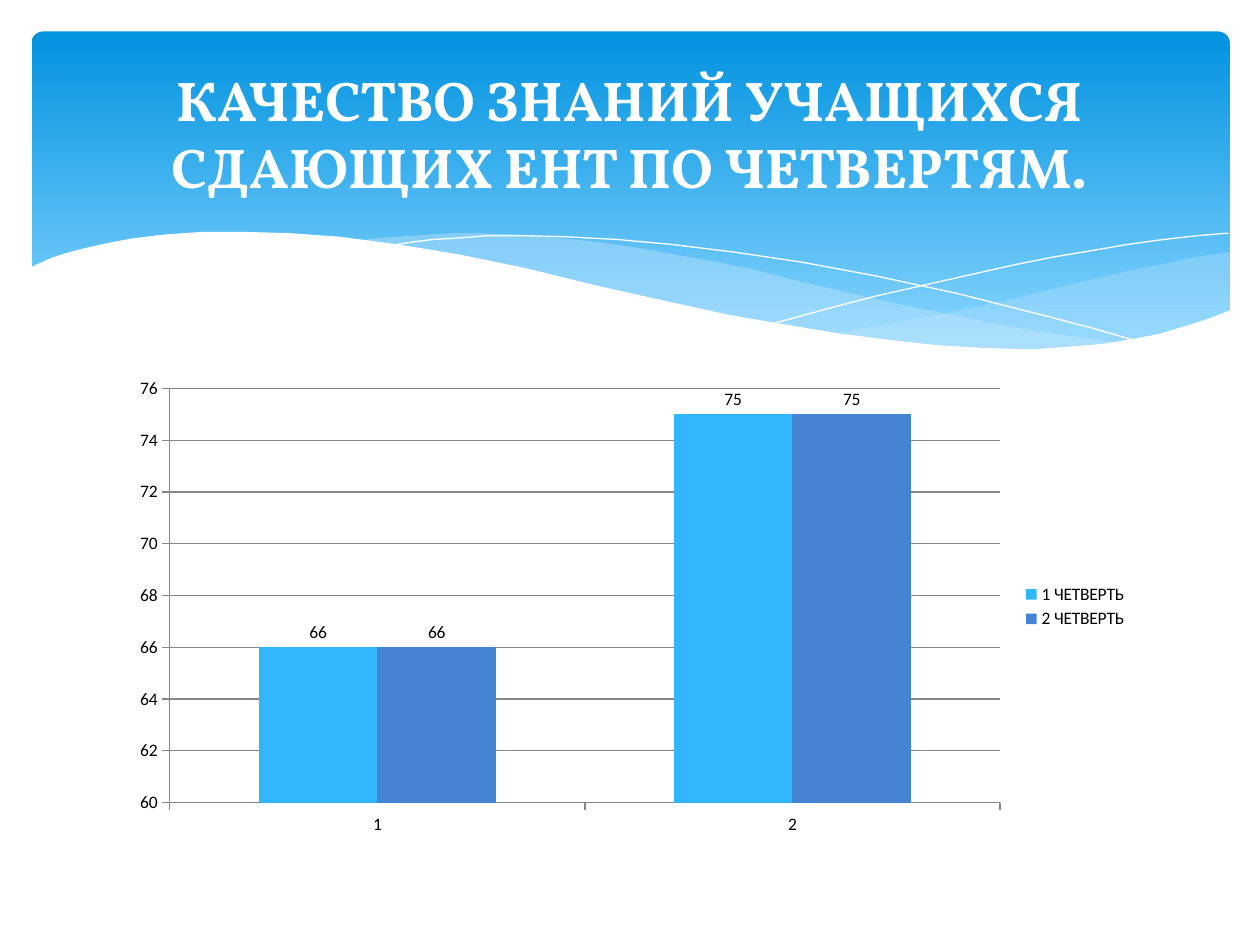
from lxml.etree import SubElement
from pptx import Presentation
from pptx.chart.data import CategoryChartData
from pptx.dml.color import RGBColor
from pptx.enum.chart import XL_CHART_TYPE as CHART, XL_LABEL_POSITION as LABEL
from pptx.enum.chart import XL_LEGEND_POSITION as LEGEND, XL_TICK_MARK as TICK
from pptx.enum.shapes import MSO_SHAPE
from pptx.enum.text import MSO_ANCHOR, PP_ALIGN
from pptx.oxml.ns import qn
from pptx.util import Inches, Pt

TITLE = "КАЧЕСТВО ЗНАНИЙ УЧАЩИХСЯ СДАЮЩИХ ЕНТ ПО ЧЕТВЕРТЯМ."
CATEGORIES = ["1", "2"]
SERIES = [("1 ЧЕТВЕРТЬ", (66, 75), "quarter1"), ("2 ЧЕТВЕРТЬ", (66, 75), "quarter2")]
COLORS = {
    "white": "FFFFFF", "black": "000000", "grid": "868686",
    "sky_top": "0293E0", "sky_bottom": "83D3FE", "mist": "C6E7FC",
    "quarter1": "31B6FD", "quarter2": "4584D3",
}

# Wave outlines, in hundredths of an inch
RIGHT_WAVE = [
    (976, 200), (948, 204), (921, 210), (891, 216), (861, 223), (805, 237), (753, 248),
    (706, 257), (661, 265), (691, 269), (719, 272), (745, 275), (769, 277), (803, 278),
    (835, 277), (863, 275), (889, 272), (913, 267), (935, 262), (949, 257), (963, 252),
    (976, 247),
]
MIDDLE_WAVE = [
    (893, 273), (866, 269), (837, 265), (807, 260), (775, 254), (741, 247), (706, 240),
    (668, 231), (629, 222), (598, 214), (569, 208), (541, 203), (514, 198), (489, 194),
    (465, 191), (442, 189), (420, 187), (399, 186), (380, 185), (361, 185), (344, 186),
    (328, 187), (313, 188), (299, 189), (286, 191), (323, 196), (362, 203), (404, 211),
    (449, 222), (491, 232), (530, 240), (566, 248), (601, 255), (634, 261), (665, 266),
    (695, 270), (722, 274), (748, 276), (773, 277), (796, 278), (828, 278), (857, 277),
    (876, 275),
]
FALLING_LINE = [
    (309, 195), (328, 192), (344, 190), (363, 189), (387, 187), (416, 187), (450, 188),
    (489, 190), (533, 194), (582, 200), (636, 208), (695, 219), (760, 233), (831, 251),
    (869, 261), (907, 272),
]
RISING_LINE = [
    (613, 257), (653, 246), (695, 235), (748, 223), (806, 210), (836, 204), (866, 199),
    (895, 194), (924, 190), (951, 187), (975, 185),
]
FRONT_WAVE = [
    (977, 246), (959, 253), (940, 259), (920, 265), (899, 269), (875, 273), (850, 275),
    (823, 277), (809, 277), (778, 276), (744, 274), (708, 270), (668, 265), (626, 258),
    (579, 250), (529, 239), (475, 227), (418, 213), (365, 202), (316, 194), (271, 188),
    (230, 185), (193, 184), (161, 184), (132, 186), (106, 189), (85, 193), (67, 197),
    (52, 201), (40, 205), (29, 210), (23, 213), (23, 329), (977, 329),
]
WAVES = [  # points, fill opacity in percent (None for an open line), colour
    (RIGHT_WAVE, 29, "mist"), (MIDDLE_WAVE, 40, "mist"),
    (FALLING_LINE, None, "white"), (RISING_LINE, None, "white"),
    (FRONT_WAVE, 100, "white"),
]


def rgb(name):
    return RGBColor.from_string(COLORS[name])


def add_banner(s):
    sp = s.shapes.add_shape(MSO_SHAPE.ROUNDED_RECTANGLE, Inches(0.25), Inches(0.25),
                            Inches(9.51), Inches(2.7))
    sp.adjustments[0] = 0.034
    sp.shadow.inherit = False
    sp.line.fill.background()
    sp.fill.gradient()
    sp.fill.gradient_angle = 270
    stops = zip(sp.fill.gradient_stops, [(0, "sky_top"), (0.9, "sky_bottom")])
    for stop, (position, color) in stops:
        stop.position = position
        stop.color.rgb = rgb(color)


def add_wave(s, points, opacity, color):
    closed = opacity is not None
    builder = s.shapes.build_freeform(*points[0], scale=Inches(0.01))
    builder.add_line_segments(points[1:], close=closed)
    sp = builder.convert_to_shape()
    sp.shadow.inherit = False
    if not closed:
        sp.fill.background()
        sp.line.color.rgb = rgb(color)
        sp.line.width = Pt(0)
        return
    sp.line.fill.background()
    sp.fill.solid()
    sp.fill.fore_color.rgb = rgb(color)
    if opacity < 100:
        clr = sp.fill._xPr.find(qn("a:solidFill"))[0]
        SubElement(clr, qn("a:alpha"), val=str(opacity * 1000))


def add_quality_chart(s):
    data = CategoryChartData()
    data.categories = CATEGORIES
    for name, values, _ in SERIES:
        data.add_series(name, values)
    chart = s.shapes.add_chart(CHART.COLUMN_CLUSTERED, Inches(0.95), Inches(2.93),
                               Inches(8.1), Inches(3.77), data).chart
    chart.has_title = False
    chart.font.size = Pt(10)
    chart.font.name = "Calibri"
    chart.font.color.rgb = rgb("black")
    chart.has_legend = True
    chart.legend.position = LEGEND.RIGHT
    chart.legend.include_in_layout = False

    axis = chart.value_axis
    axis.minimum_scale, axis.maximum_scale, axis.major_unit = 60, 76, 2
    axis.has_major_gridlines = True
    for line in (axis.major_gridlines.format.line, axis.format.line,
                 chart.category_axis.format.line):
        line.color.rgb = rgb("grid")
        line.width = Pt(0.75)
    for ax in (axis, chart.category_axis):
        ax.major_tick_mark = TICK.OUTSIDE

    plot = chart.plots[0]
    plot.gap_width = 150
    plot.overlap = 0
    plot.vary_by_categories = False
    for series, (_, _, color) in zip(plot.series, SERIES):
        series.format.fill.solid()
        series.format.fill.fore_color.rgb = rgb(color)
        series.data_labels.show_value = True
        series.data_labels.position = LABEL.OUTSIDE_END


def format_title(s):
    title = s.shapes.title
    title.left, title.top = Inches(0.5), Inches(0.37)
    title.width, title.height = Inches(9), Inches(1.37)
    tf = title.text_frame
    tf.text = TITLE
    tf.word_wrap = True
    tf.vertical_anchor = MSO_ANCHOR.MIDDLE
    p = tf.paragraphs[0]
    p.alignment = PP_ALIGN.CENTER
    font = p.runs[0].font
    font.name, font.size, font.bold = "Vollkorn", Pt(32), True
    font.color.rgb = rgb("white")
    s.shapes._spTree.append(title._element)  # bring in front of the banner


def main():
    prs = Presentation()
    prs.slide_width, prs.slide_height = Inches(10), Inches(7.5)
    s = prs.slides.add_slide(prs.slide_layouts[5])
    add_banner(s)
    for wave in WAVES:
        add_wave(s, *wave)
    add_quality_chart(s)
    format_title(s)
    prs.save("out.pptx")


if __name__ == "__main__":
    main()
